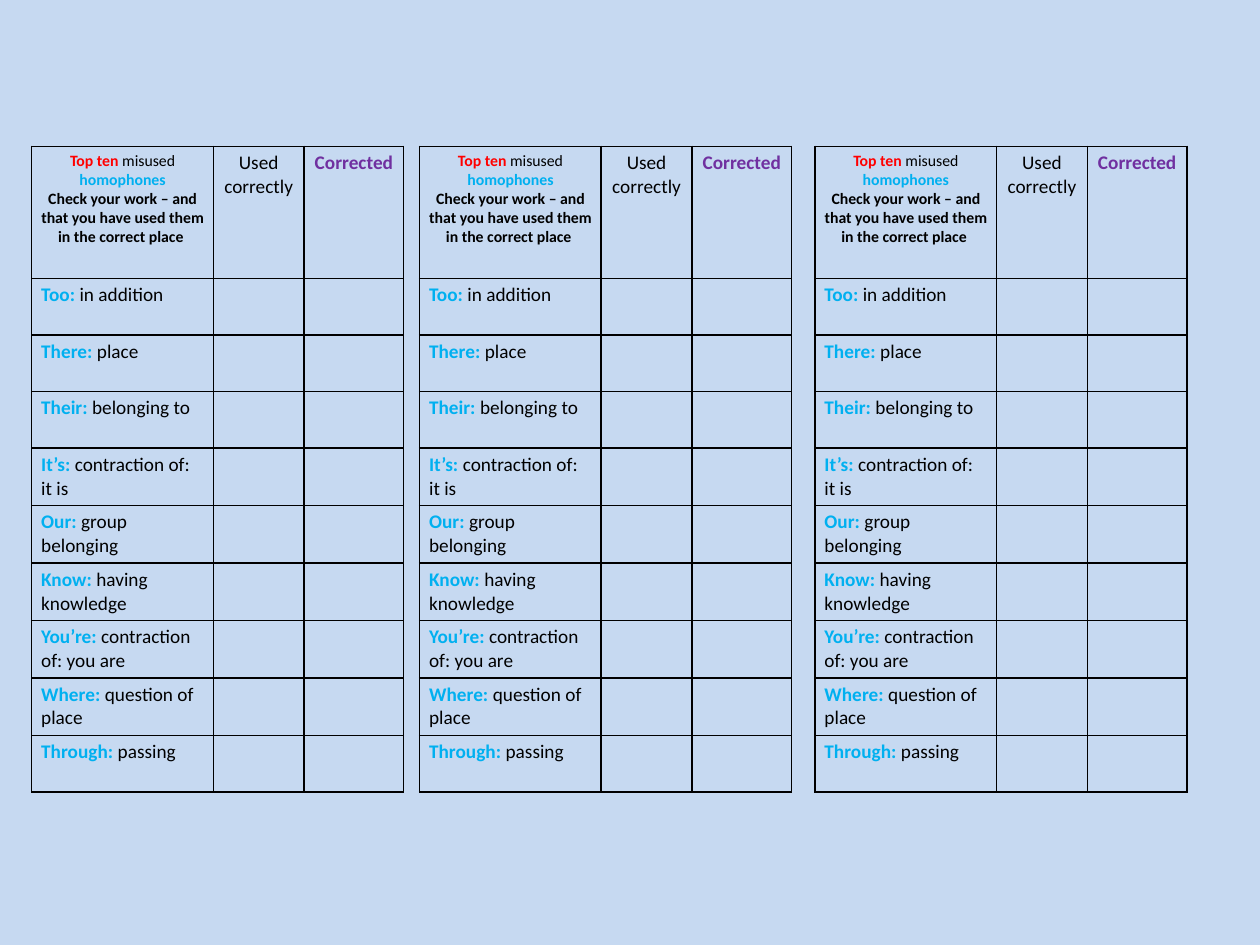
from lxml.etree import SubElement
from pptx import Presentation
from pptx.dml.color import RGBColor
from pptx.enum.text import PP_ALIGN
from pptx.oxml.ns import qn
from pptx.util import Cm, Pt

BACKGROUND = RGBColor(0xC6, 0xD9, 0xF1)
BLACK = RGBColor(0, 0, 0)
RED = RGBColor(0xFF, 0, 0)
BLUE = RGBColor(0, 0xB0, 0xF0)
PURPLE = RGBColor(0x70, 0x30, 0xA0)

TABLE_LEFTS = [0.64, 8.46, 16.43]
TABLE_TOP = 2.95
COL_WIDTHS = [3.66, 1.83, 2.01]
HEADER_HEIGHT, ROW_HEIGHT = 2.66, 1.14
MARGINS = {"margin_left": Cm(0.19), "margin_right": Cm(0.19),
           "margin_top": Cm(0.1), "margin_bottom": Cm(0.1)}

# Each header cell is a list of paragraphs; a run is text, colour, bold.
HEADERS = [
    (9, [[("Top ten ", RED, True), ("misused ", BLACK, False),
          ("homophones", BLUE, True)],
         [("Check your work – and that you have used them in the correct place ",
           BLACK, True)]]),
    (11, [[("Used correctly ", BLACK, False)]]),
    (11, [[("Corrected", PURPLE, True)]]),
]
HOMOPHONES = [
    ("Too", "in addition"),
    ("There", "place"),
    ("Their", "belonging to"),
    ("It’s", "contraction of:\nit is"),
    ("Our", "group belonging"),
    ("Know", "having knowledge"),
    ("You’re", "contraction of: you are"),
    ("Where", "question of place"),
    ("Through", "passing"),
]


def write_runs(p, runs, size):
    for text, color, bold in runs:
        for i, line in enumerate(text.split("\n")):
            if i:
                p.add_line_break()
            r = p.add_run()
            r.text = line
            r.font.color.rgb = color
            for name, value in {"name": "Calibri", "size": Pt(size), "bold": bold}.items():
                setattr(r.font, name, value)


def format_cell(cell):
    """Set the margins, a black 1 pt border on every side, and no fill."""
    for name, value in MARGINS.items():
        setattr(cell, name, value)
    tcPr = cell._tc.get_or_add_tcPr()
    for side in ("lnL", "lnR", "lnT", "lnB"):
        ln = SubElement(tcPr, qn(f"a:{side}"), w=str(Pt(1)))
        fill = SubElement(ln, qn("a:solidFill"))
        SubElement(fill, qn("a:srgbClr"), val=str(BLACK))
    cell.fill.background()


prs = Presentation()
prs.slide_width, prs.slide_height = Cm(25.4), Cm(19.05)
s = prs.slides.add_slide(prs.slide_layouts[6])
s.background.fill.solid()
s.background.fill.fore_color.rgb = BACKGROUND

row_heights = [HEADER_HEIGHT] + [ROW_HEIGHT] * len(HOMOPHONES)

for left in TABLE_LEFTS:
    table = s.shapes.add_table(
        len(row_heights), len(COL_WIDTHS), Cm(left), Cm(TABLE_TOP),
        Cm(sum(COL_WIDTHS)), Cm(sum(row_heights))).table
    table.first_row = table.horz_banding = False
    for col, width in zip(table.columns, COL_WIDTHS):
        col.width = Cm(width)
    for row, height in zip(table.rows, row_heights):
        row.height = Cm(height)
    for cell in table.iter_cells():
        format_cell(cell)

    for col, (size, paragraphs) in enumerate(HEADERS):
        tf = table.cell(0, col).text_frame
        for i, runs in enumerate(paragraphs):
            p = tf.add_paragraph() if i else tf.paragraphs[0]
            p.alignment = PP_ALIGN.CENTER
            write_runs(p, runs, size)

    for row, (word, meaning) in enumerate(HOMOPHONES, start=1):
        p = table.cell(row, 0).text_frame.paragraphs[0]
        write_runs(p, [(f"{word}: ", BLUE, True), (meaning, BLACK, False)], 11)

prs.save("out.pptx")
